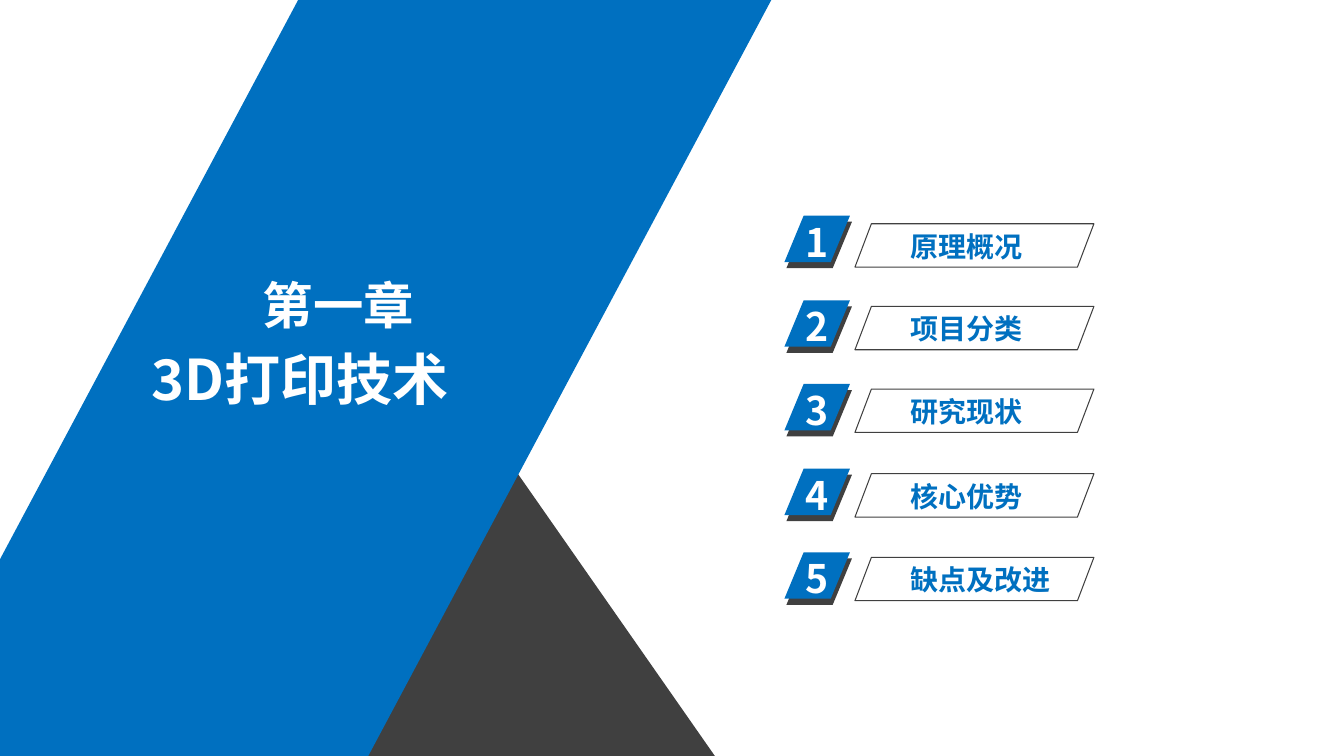
from dataclasses import dataclass
from lxml.etree import SubElement
from pptx import Presentation
from pptx.dml.color import RGBColor
from pptx.enum.shapes import MSO_SHAPE
from pptx.enum.text import MSO_ANCHOR, MSO_AUTO_SIZE, PP_ALIGN
from pptx.oxml.ns import qn
from pptx.util import Emu, Pt


@dataclass(frozen=True)
class Theme:
    font: str = "Noto Sans CJK SC"
    blue: RGBColor = RGBColor(0x00, 0x70, 0xC0)
    dark: RGBColor = RGBColor(0x40, 0x40, 0x40)
    white: RGBColor = RGBColor(0xFF, 0xFF, 0xFF)
    title: int = 40
    chapter: int = 36
    number: int = 28
    label: int = 20
    outline: float = 0.75


theme = Theme()
PX = 9144


def parallelogram(shapes, box, slant, fill=None):
    sp = shapes.add_shape(MSO_SHAPE.PARALLELOGRAM, *[Emu(v * PX) for v in box])
    sp.adjustments[0] = slant
    sp.shadow.inherit = False
    if fill is None:
        sp.fill.background()
        sp.line.color.rgb = theme.dark
        sp.line.width = Pt(theme.outline)
    else:
        sp.fill.solid()
        sp.fill.fore_color.rgb = fill
        sp.line.fill.background()


def write(sp, box, text, size, color):
    sp.left, sp.top, sp.width, sp.height = [Emu(v * PX) for v in box]
    tf = sp.text_frame
    tf.word_wrap = True
    tf.auto_size = MSO_AUTO_SIZE.NONE
    tf.vertical_anchor = MSO_ANCHOR.MIDDLE
    p = tf.paragraphs[0]
    p.text = text
    p.alignment = PP_ALIGN.LEFT
    p.font.name = theme.font
    p.font.size = Pt(size)
    p.font.bold = True
    p.font.color.rgb = color
    SubElement(p._p.pPr.find(qn("a:defRPr")), qn("a:ea"), typeface=theme.font)


prs = Presentation()
prs.slide_width, prs.slide_height = Emu(1333 * PX), Emu(750 * PX)
s = prs.slides.add_slide(prs.slide_layouts[5])

builder = s.shapes.build_freeform(357, 750, scale=PX)
builder.add_line_segments([(508, 462), (709, 750)], close=True)
triangle = builder.convert_to_shape()
triangle.shadow.inherit = False
triangle.fill.solid()
triangle.fill.fore_color.rgb = theme.dark
triangle.line.fill.background()

parallelogram(s.shapes, (-104, 0, 869, 750), 0.533, theme.blue)

chapter = s.shapes.add_textbox(0, 0, 0, 0)
write(chapter, (251, 266, 181, 71), "第一章", theme.chapter, theme.white)
title = s.shapes.title
s.shapes._spTree.append(title._element)
write(title, (140, 337, 377, 77), "3D打印技术", theme.title, theme.white)

topics = [
    ("原理概况", 222),
    ("项目分类", 304),
    ("研究现状", 386),
    ("核心优势", 470),
    ("缺点及改进", 553),
]
for i, (topic, label_top) in enumerate(topics):
    top = round(214.5 + 83.4 * i)
    badge = s.shapes.add_group_shape()
    parallelogram(badge.shapes, (780, top + 6, 65, 46), 0.415, theme.dark)
    parallelogram(badge.shapes, (778, top, 65, 46), 0.415, theme.blue)
    number = badge.shapes.add_textbox(0, 0, 0, 0)
    write(number, (789, top - 3, 69, 57), str(i + 1), theme.number, theme.white)

    parallelogram(s.shapes, (848, label_top, 237, 43), 0.38)
    label = s.shapes.add_textbox(0, 0, 0, 0)
    write(label, (893, label_top, 303, 44), topic, theme.label, theme.blue)

prs.save("out.pptx")
